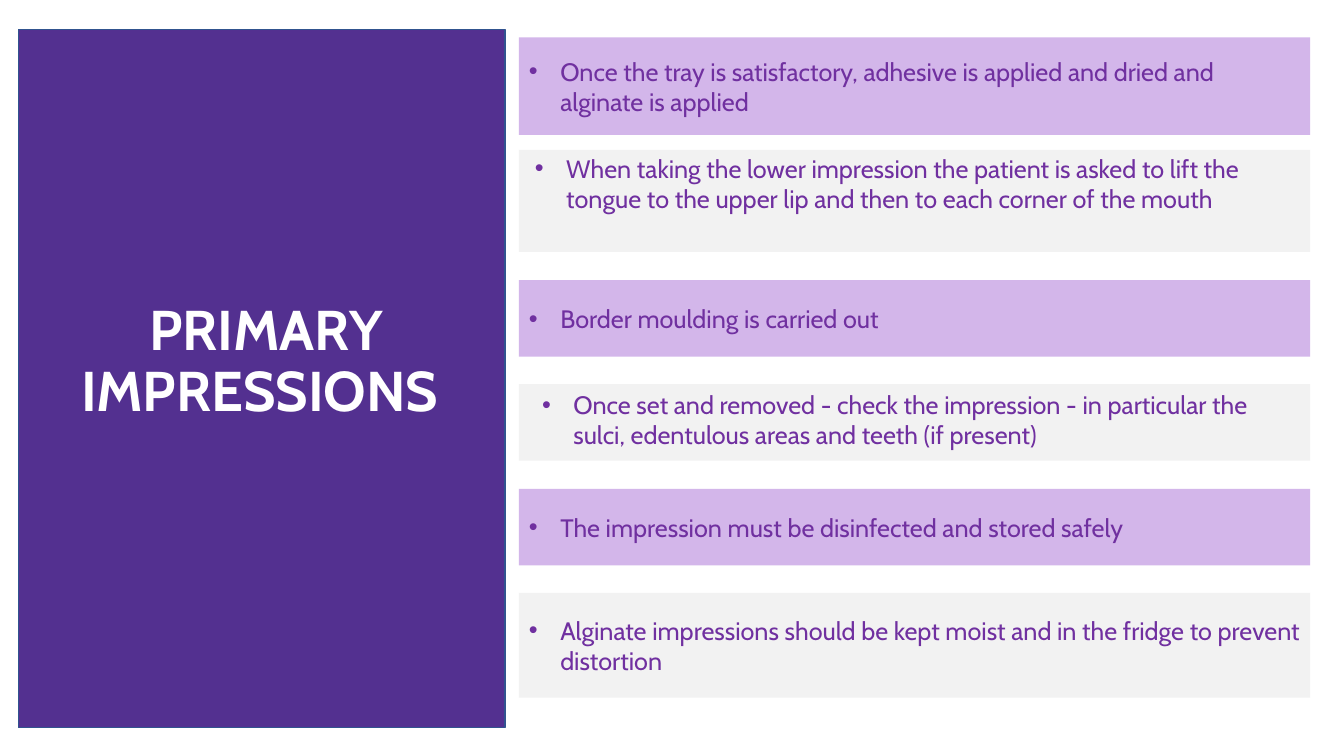
from lxml import etree
from pptx import Presentation
from pptx import util as u
from pptx.dml import color
from pptx.enum import shapes, text
from pptx.oxml import ns

FONT = "Cabin"
PURPLE, LILAC, GREY = "7030A0", "D3B6EA", "F2F2F2"
STEPS = [
    (0.94, 2.46, LILAC, None,
     "Once the tray is satisfactory, adhesive is applied and dried and alginate is applied"),
    (3.78, 2.57, GREY, (0.15, -0.05, 2.57),
     "When taking the lower impression the patient is asked to lift the tongue to the upper lip and then to each corner of the mouth"),
    (7.06, 1.93, LILAC, None, "Border moulding is carried out"),
    (9.68, 1.93, GREY, (0.33, 0, 1.8),
     "Once set and removed - check the impression - in particular the sulci, edentulous areas and teeth (if present)"),
    (12.32, 1.93, LILAC, None, "The impression must be disinfected and stored safely"),
    (14.94, 2.64, GREY, None,
     "Alginate impressions should be kept moist and in the fridge to prevent distortion"),
]


def rgb(value):
    return color.RGBColor.from_string(value)


def lengths(box):
    return [u.Cm(side) for side in box]


def add_block(slide, box, fill, outline=None):
    block = slide.shapes.add_shape(shapes.MSO_SHAPE.RECTANGLE, *lengths(box))
    block.shadow.inherit = False
    block.fill.solid()
    block.fill.fore_color.rgb = rgb(fill)
    if outline:
        block.line.color.rgb = rgb(outline)
        block.line.width = u.Pt(1)
    else:
        block.line.fill.background()
    return block


def set_frame(holder, anchor, inset):
    frame = holder.text_frame
    frame.word_wrap = True
    frame.vertical_anchor = anchor
    frame.margin_left = frame.margin_right = u.Cm(0.25)
    frame.margin_top = frame.margin_bottom = u.Cm(inset)
    return frame.paragraphs[0]


def add_words(paragraph, words, size, ink, bold=False):
    run = paragraph.add_run()
    run.text = words
    run.font.name = FONT
    run.font.size = u.Pt(size)
    run.font.bold = bold
    run.font.color.rgb = rgb(ink)


def add_bullet(paragraph):
    props = paragraph._p.get_or_add_pPr()
    props.set("marL", str(u.Cm(0.79)))
    props.set("indent", str(-u.Cm(0.79)))
    tint = etree.SubElement(props, ns.qn("a:buClr"))
    etree.SubElement(tint, ns.qn("a:srgbClr"), val=PURPLE)
    etree.SubElement(props, ns.qn("a:buFont"), typeface="Arial")
    etree.SubElement(props, ns.qn("a:buChar"), char="•")


def title_panel(slide, left, top, width, height):
    add_block(slide, (left, top, width, height), "533090", "31538F")
    heading = slide.shapes.add_textbox(
        *lengths((left + 0.68, top + 6.75, width - 1.14, 6.4)))
    paragraph = set_frame(heading, text.MSO_ANCHOR.TOP, 0.13)
    paragraph.alignment = text.PP_ALIGN.CENTER
    paragraph.line_spacing = 0.9
    add_words(paragraph, "PRIMARY IMPRESSIONS ", 40, "FFFFFF", True)


def step_bar(slide, left, top, width, height, fill, caption, words):
    bar = add_block(slide, (left, top, width, height), fill)
    if caption:
        inset, shift, depth = caption
        label = slide.shapes.add_textbox(
            *lengths((left + inset, top + shift, width - 2 * inset, depth)))
        paragraph = set_frame(label, text.MSO_ANCHOR.TOP, 0.13)
    else:
        paragraph = set_frame(bar, text.MSO_ANCHOR.MIDDLE, 0.25)
    paragraph.alignment = text.PP_ALIGN.LEFT
    add_bullet(paragraph)
    add_words(paragraph, words, 18, PURPLE)


def main():
    deck = Presentation()
    deck.slide_width, deck.slide_height = u.Cm(33.87), u.Cm(19.05)
    slide = deck.slides.add_slide(deck.slide_layouts[6])
    title_panel(slide, 0.46, 0.74, 12.27, 17.6)
    for top, height, fill, caption, words in STEPS:
        step_bar(slide, 13.08, top, 19.94, height, fill, caption, words)
    deck.save("out.pptx")


if __name__ == "__main__":
    main()
